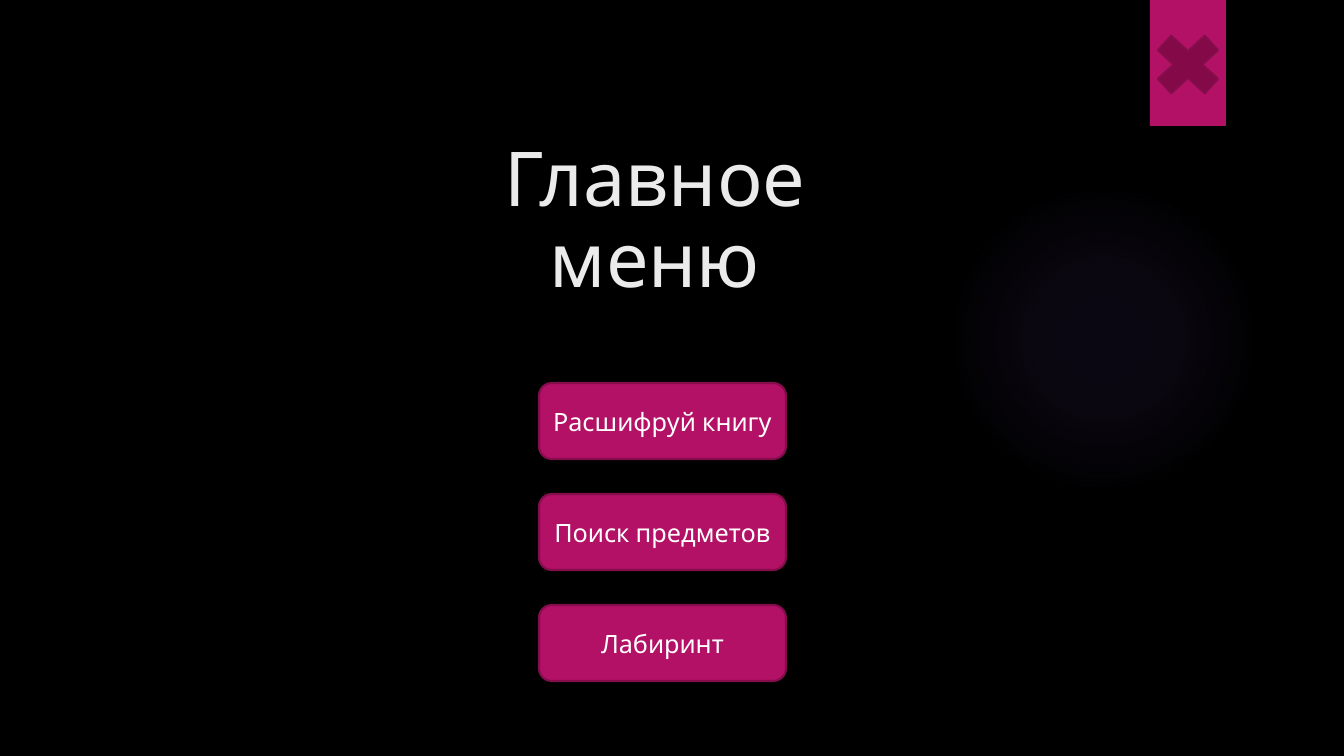
from lxml import etree
from pptx import Presentation
from pptx.dml.color import RGBColor
from pptx.enum.shapes import MSO_SHAPE
from pptx.enum.text import MSO_ANCHOR, PP_ALIGN
from pptx.oxml import parse_xml
from pptx.oxml.ns import nsdecls, qn
from pptx.util import Pt

TITLE = "Главное\vменю"
GAMES = ["Расшифруй книгу", "Поиск предметов", "Лабиринт"]
FONT = "League Spartan"
COLORS = {
    "background": "000000",
    "glow": "9B6BF2",
    "accent": "B31166",
    "border": "840D4B",
    "cross": "830949",
    "title": "EBEBEB",
    "label": "FFFFFF",
}
GLOW_STOPS = [(0, 7), (36, 6), (69, 0)]

SLIDE_SIZE = (1344, 756)
GLOW_BOX = (949, 184, 310, 310)
RIBBON_BOX = (1150, 0, 76, 126)
CROSS_BOX = (1143, 23, 90, 83)
TITLE_BOX = (480, 147, 350, 151)
BUTTON_BOX = (539, 383, 247, 76)
BUTTON_STEP = 111
EMU_PER_PX = 914400 / 100.8


def emu(lengths):
    return [round(length * EMU_PER_PX) for length in lengths]


def color(name):
    return RGBColor.from_string(COLORS[name])


def add_panel(slide, kind, box, fill=None, border=None):
    panel = slide.shapes.add_shape(kind, *emu(box))
    panel.shadow.inherit = False
    if fill:
        panel.fill.solid()
        panel.fill.fore_color.rgb = color(fill)
    else:
        panel.fill.background()
    if border:
        panel.line.color.rgb = color(border)
        panel.line.width = Pt(1.5)
    else:
        panel.line.fill.background()
    return panel


def write(holder, text, size, ink, spacing=1.0):
    frame = holder.text_frame
    frame.word_wrap = True
    frame.vertical_anchor = MSO_ANCHOR.MIDDLE
    frame.text = text
    paragraph = frame.paragraphs[0]
    paragraph.alignment = PP_ALIGN.CENTER
    paragraph.line_spacing = spacing
    for run in paragraph.runs:
        run.font.name = FONT
        run.font.size = Pt(size)
        run.font.color.rgb = color(ink)


def add_glow(slide):
    glow = add_panel(slide, MSO_SHAPE.OVAL, GLOW_BOX)
    gradient = parse_xml(f'<a:gradFill {nsdecls("a")} rotWithShape="1"/>')
    stops = etree.SubElement(gradient, qn("a:gsLst"))
    for position, opacity in GLOW_STOPS:
        stop = etree.SubElement(stops, qn("a:gs"), pos=str(position * 1000))
        tint = etree.SubElement(stop, qn("a:srgbClr"), val=COLORS["glow"])
        etree.SubElement(tint, qn("a:alpha"), val=str(opacity * 1000))
    radial = etree.SubElement(gradient, qn("a:path"), {"path": "circle"})
    center = {side: "50000" for side in "ltrb"}
    etree.SubElement(radial, qn("a:fillToRect"), center)
    properties = glow.element.spPr
    properties.replace(properties.find(qn("a:noFill")), gradient)


def main():
    deck = Presentation()
    deck.slide_width, deck.slide_height = emu(SLIDE_SIZE)
    slide = deck.slides.add_slide(deck.slide_layouts[6])
    slide.background.fill.solid()
    slide.background.fill.fore_color.rgb = color("background")

    add_glow(slide)
    add_panel(slide, MSO_SHAPE.RECTANGLE, RIBBON_BOX, "accent")
    add_panel(slide, MSO_SHAPE.MATH_MULTIPLY, CROSS_BOX, "cross", "border")

    title = slide.shapes.add_textbox(*emu(TITLE_BOX))
    write(title, TITLE, size=54, ink="title", spacing=0.9)

    left, top, width, height = BUTTON_BOX
    for row, game in enumerate(GAMES):
        box = (left, top + row * BUTTON_STEP, width, height)
        button = add_panel(slide, MSO_SHAPE.ROUNDED_RECTANGLE, box, "accent", "border")
        write(button, game, size=18, ink="label")

    deck.save("out.pptx")


if __name__ == "__main__":
    main()
